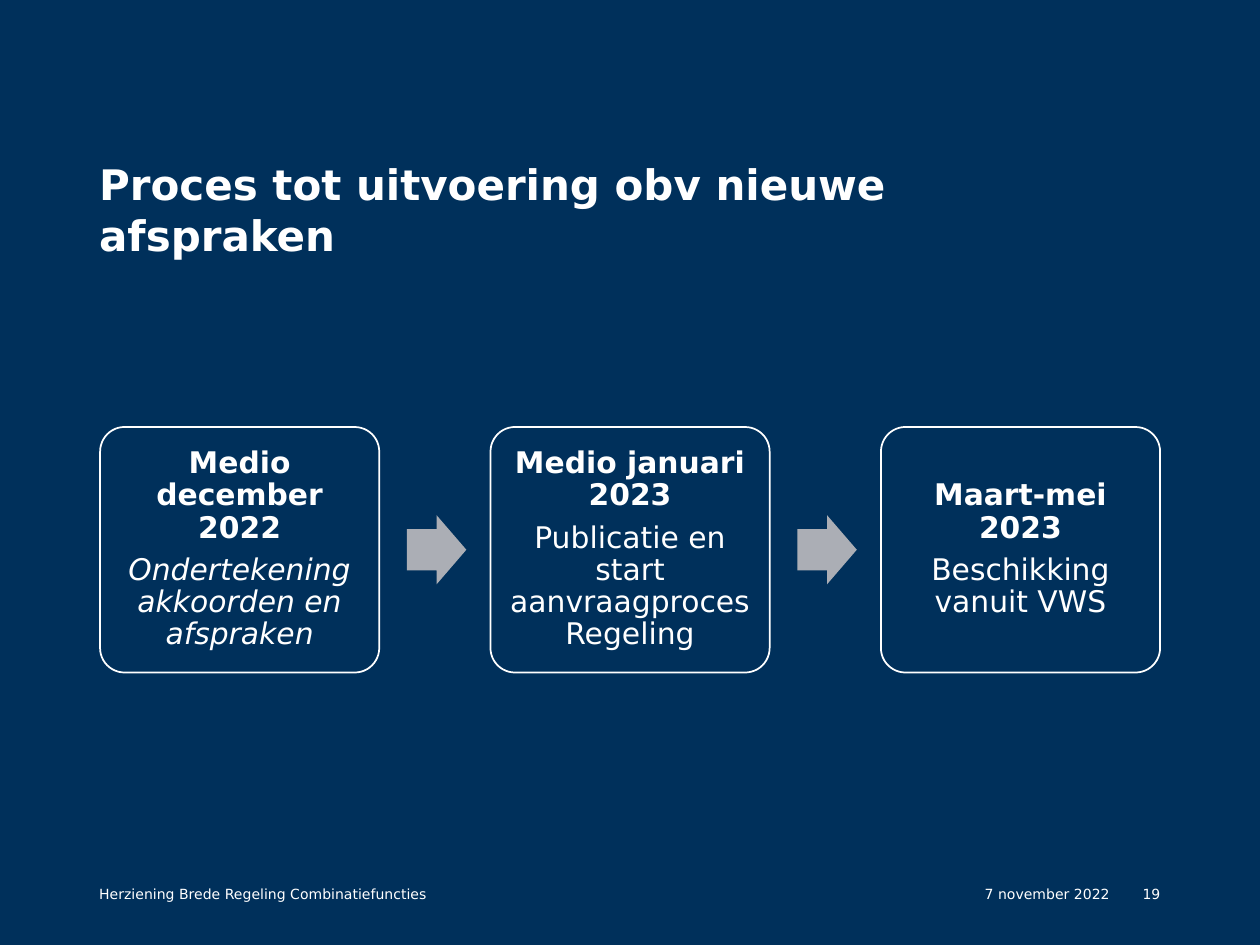
from dataclasses import dataclass

from pptx import Presentation
from pptx.dml.color import RGBColor
from pptx.enum.shapes import MSO_SHAPE
from pptx.enum.text import MSO_ANCHOR, PP_ALIGN
from pptx.slide import Slide
from pptx.text.text import TextFrame
from pptx.util import Pt

NAVY = RGBColor(0x00, 0x30, 0x5B)
WHITE = RGBColor(0xFF, 0xFF, 0xFF)
GREY = RGBColor(0xAB, 0xAE, 0xB5)
FONT = "DejaVu Sans"

ROUNDED = MSO_SHAPE.ROUNDED_RECTANGLE
ARROW = MSO_SHAPE.RIGHT_ARROW
TOP, MIDDLE, BOTTOM = MSO_ANCHOR.TOP, MSO_ANCHOR.MIDDLE, MSO_ANCHOR.BOTTOM
LEFT, CENTER, RIGHT = PP_ALIGN.LEFT, PP_ALIGN.CENTER, PP_ALIGN.RIGHT

STEP_LEFT, STEP_TOP, STEP_W, STEP_H = 57.2, 244, 159.5, 140.3
STEP_PITCH = 223.1
ARROW_OFFSET, ARROW_W, ARROW_H = 175.3, 34, 39.5
FOOTER_TOP, FOOTER_H = 506.2, 18.7


@dataclass
class Label:
    text: str
    left: float
    top: float
    width: float
    height: float
    size: float = 8
    bold: bool = False
    align: PP_ALIGN = LEFT
    anchor: MSO_ANCHOR = TOP


@dataclass
class Step:
    period: str
    action: str
    italic: bool = False


LABELS = [
    Label("Proces tot uitvoering obv nieuwe afspraken",
          56.7, 98.6, 590.4, 49.7, 24, True, anchor=BOTTOM),
    Label("7 november 2022", 521.3, FOOTER_TOP, 113, FOOTER_H, align=RIGHT),
    Label("Herziening Brede Regeling Combinatiefuncties",
          56.7, FOOTER_TOP, 297.4, FOOTER_H),
    Label("19", 635, FOOTER_TOP, 28.1, FOOTER_H, align=RIGHT),
]

STEPS = [
    Step("Medio december 2022", "Ondertekening akkoorden en afspraken", True),
    Step("Medio januari 2023", "Publicatie en start aanvraagproces Regeling"),
    Step("Maart-mei 2023", "Beschikking vanuit VWS"),
]


def set_frame(tf: TextFrame, inset: float, anchor: MSO_ANCHOR) -> None:
    tf.word_wrap = True
    tf.vertical_anchor = anchor
    tf.margin_left = tf.margin_right = Pt(inset)
    tf.margin_top = tf.margin_bottom = Pt(inset)


def add_run(p, text: str, size: float, bold: bool = False, italic: bool = False) -> None:
    r = p.add_run()
    r.text = text
    r.font.name = FONT
    r.font.size = Pt(size)
    r.font.bold = bold
    r.font.italic = italic
    r.font.color.rgb = WHITE


def add_label(s: Slide, label: Label) -> None:
    box = s.shapes.add_textbox(Pt(label.left), Pt(label.top), Pt(label.width), Pt(label.height))
    set_frame(box.text_frame, 0, label.anchor)
    p = box.text_frame.paragraphs[0]
    p.alignment = label.align
    add_run(p, label.text, label.size, label.bold)


def add_step(s: Slide, step: Step, left: float) -> None:
    sp = s.shapes.add_shape(ROUNDED, Pt(left), Pt(STEP_TOP), Pt(STEP_W), Pt(STEP_H))
    sp.adjustments[0] = 0.1
    sp.shadow.inherit = False
    sp.fill.solid()
    sp.fill.fore_color.rgb = NAVY
    sp.line.color.rgb = WHITE
    sp.line.width = Pt(1)
    tf = sp.text_frame
    set_frame(tf, 5, MIDDLE)
    period, action = tf.paragraphs[0], tf.add_paragraph()
    for p in (period, action):
        p.alignment = CENTER
        p.line_spacing = 0.9
    period.space_after = Pt(6)
    add_run(period, step.period, 17, bold=True)
    add_run(action, step.action, 17, italic=step.italic)


def add_arrow(s: Slide, left: float) -> None:
    top = STEP_TOP + (STEP_H - ARROW_H) / 2
    sp = s.shapes.add_shape(ARROW, Pt(left), Pt(top), Pt(ARROW_W), Pt(ARROW_H))
    sp.adjustments[0] = 0.6
    sp.adjustments[1] = 0.5
    sp.shadow.inherit = False
    sp.fill.solid()
    sp.fill.fore_color.rgb = GREY
    sp.line.fill.background()


def main() -> None:
    prs = Presentation()
    prs.slide_width, prs.slide_height = Pt(720), Pt(540)
    s = prs.slides.add_slide(prs.slide_layouts[6])
    s.background.fill.solid()
    s.background.fill.fore_color.rgb = NAVY
    for label in LABELS:
        add_label(s, label)
    for i, step in enumerate(STEPS):
        left = STEP_LEFT + i * STEP_PITCH
        add_step(s, step, left)
        if i < len(STEPS) - 1:
            add_arrow(s, left + ARROW_OFFSET)
    prs.save("out.pptx")


if __name__ == "__main__":
    main()
